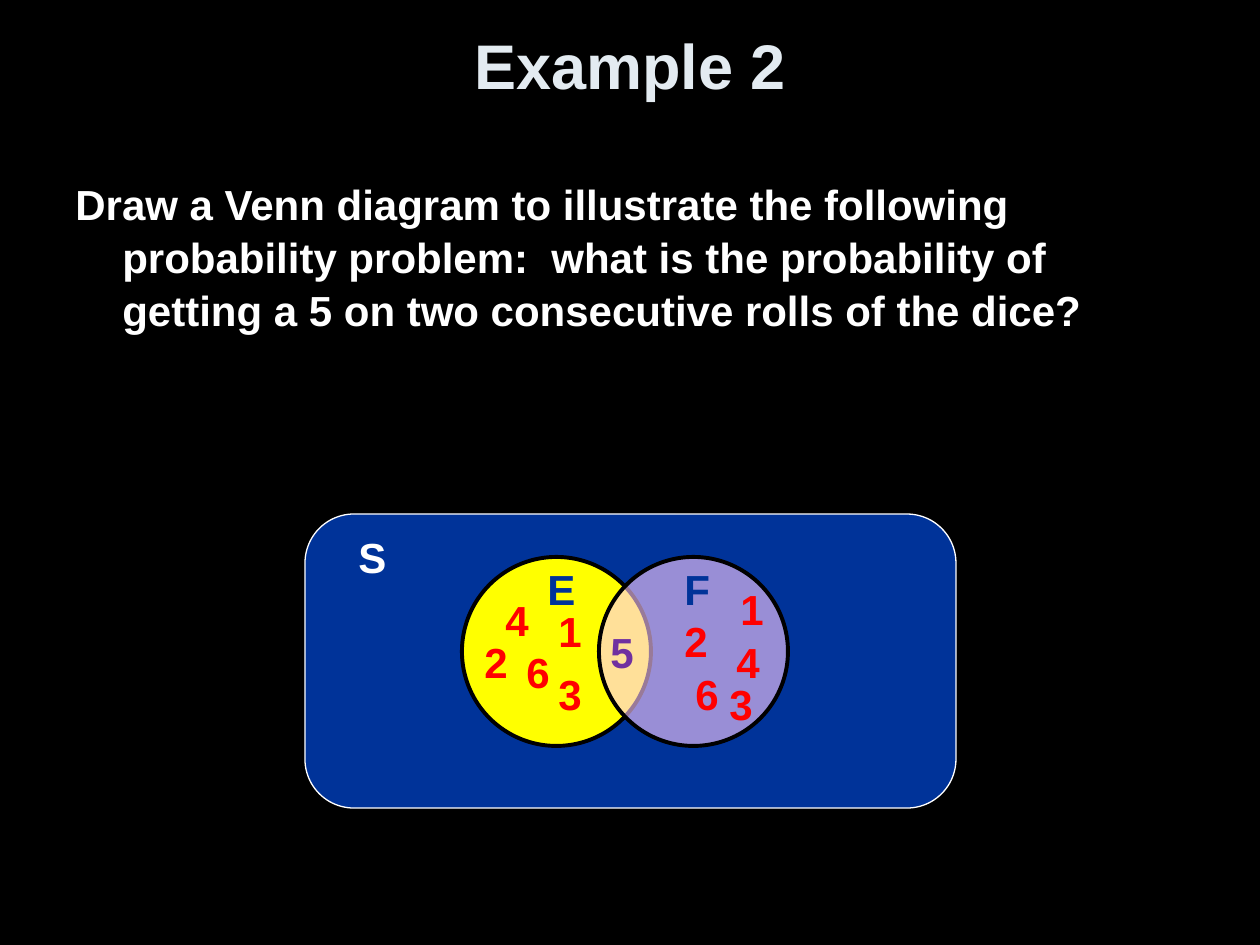
from dataclasses import dataclass

from lxml import etree
from pptx import Presentation
from pptx.dml.color import RGBColor
from pptx.enum.shapes import MSO_SHAPE
from pptx.enum.text import MSO_ANCHOR, MSO_AUTO_SIZE, PP_ALIGN
from pptx.oxml.ns import qn
from pptx.util import Emu, Pt

ROUNDED, OVAL = MSO_SHAPE.ROUNDED_RECTANGLE, MSO_SHAPE.OVAL
TOP, MIDDLE = MSO_ANCHOR.TOP, MSO_ANCHOR.MIDDLE
LEFT, CENTER = PP_ALIGN.LEFT, PP_ALIGN.CENTER
GROW = MSO_AUTO_SIZE.SHAPE_TO_FIT_TEXT
EMU_PER_PX = 914400 / 126


@dataclass(frozen=True)
class Theme:
    """Colours and type sizes of the slide."""
    font: str = "Arial"
    title_size: int = 36
    text_size: int = 24
    black: str = "000000"
    white: str = "FFFFFF"
    title: str = "E3EBF1"
    blue: str = "003399"
    yellow: str = "FFFF00"
    pink: str = "FFCCFF"
    red: str = "FF0000"
    purple: str = "7030A0"


THEME = Theme()
QUESTION = ("Draw a Venn diagram to illustrate the following probability problem:  "
            "what is the probability of getting a 5 on two consecutive rolls of the dice?")
LABELS = {
    THEME.white: [("S", 346, 525)],
    THEME.blue: [("E", 535, 557), ("F", 672, 557)],
    THEME.purple: [("5", 598, 620)],
    THEME.red: [
        ("1", 546, 599), ("3", 546, 662), ("2", 472, 630), ("4", 493, 588), ("6", 514, 640),
        ("2", 672, 609), ("4", 724, 630), ("6", 683, 662), ("1", 728, 577), ("3", 717, 672),
    ],
}


def px(length):
    """Turn pixels into EMU."""
    return Emu(round(length * EMU_PER_PX))


def set_values(target, values):
    """Set each named attribute on the target."""
    for name, value in values.items():
        setattr(target, name, value)


def add_text(shapes, text, place, color, size=THEME.text_size, align=LEFT, frame_format=None):
    """Add one paragraph of bold text and return it."""
    box = shapes.add_textbox(*map(px, place))
    set_values(box.text_frame, {"word_wrap": True, "vertical_anchor": TOP, **(frame_format or {})})
    para = box.text_frame.paragraphs[0]
    para.alignment = align
    span = para.add_run()
    span.text = text
    set_values(span.font, {"name": THEME.font, "size": Pt(size), "bold": True})
    span.font.color.rgb = RGBColor.from_string(color)
    return para


def add_region(shapes, kind, place, fill, line, width, opacity=100):
    """Add a filled and outlined region of the diagram."""
    region = shapes.add_shape(kind, *map(px, place))
    region.shadow.inherit = False
    region.fill.solid()
    region.fill.fore_color.rgb = RGBColor.from_string(fill)
    region.line.color.rgb = RGBColor.from_string(line)
    region.line.width = Pt(width)
    if opacity < 100:
        color = region.fill._xPr.find(qn("a:solidFill"))[0]
        etree.SubElement(color, qn("a:alpha"), val=str(opacity * 1000))


def add_venn(shapes):
    """Add the sample space, its two events and their outcomes."""
    group = shapes.add_group_shape().shapes
    add_region(group, ROUNDED, (305, 514, 651, 294), THEME.blue, THEME.white, 0.75)
    add_region(group, OVAL, (462, 557, 189, 189), THEME.yellow, THEME.black, 2.25)
    add_region(group, OVAL, (599, 557, 189, 189), THEME.pink, THEME.black, 2.25, opacity=60)
    for color, labels in LABELS.items():
        for text, left, top in labels:
            width = 49 if text.isdigit() else 53
            add_text(group, text, (left, top, width, 63), color,
                     frame_format={"word_wrap": False, "auto_size": GROW})


def main():
    """Build the slide and save it."""
    deck = Presentation()
    set_values(deck, {"slide_width": px(1260), "slide_height": px(945)})
    page = deck.slides.add_slide(deck.slide_layouts[6])
    page.background.fill.solid()
    page.background.fill.fore_color.rgb = RGBColor.from_string(THEME.black)
    add_text(page.shapes, "Example 2", (63, 13, 1134, 103), THEME.title, THEME.title_size,
             CENTER, {"vertical_anchor": MIDDLE})
    question = add_text(page.shapes, QUESTION, (63, 170, 1134, 260), THEME.white)
    question.line_spacing = 1.05
    for name, value in {"marL": px(47), "indent": px(-47)}.items():
        question._p.get_or_add_pPr().set(name, str(value))
    add_venn(page.shapes)
    deck.save("out.pptx")


if __name__ == "__main__":
    main()
